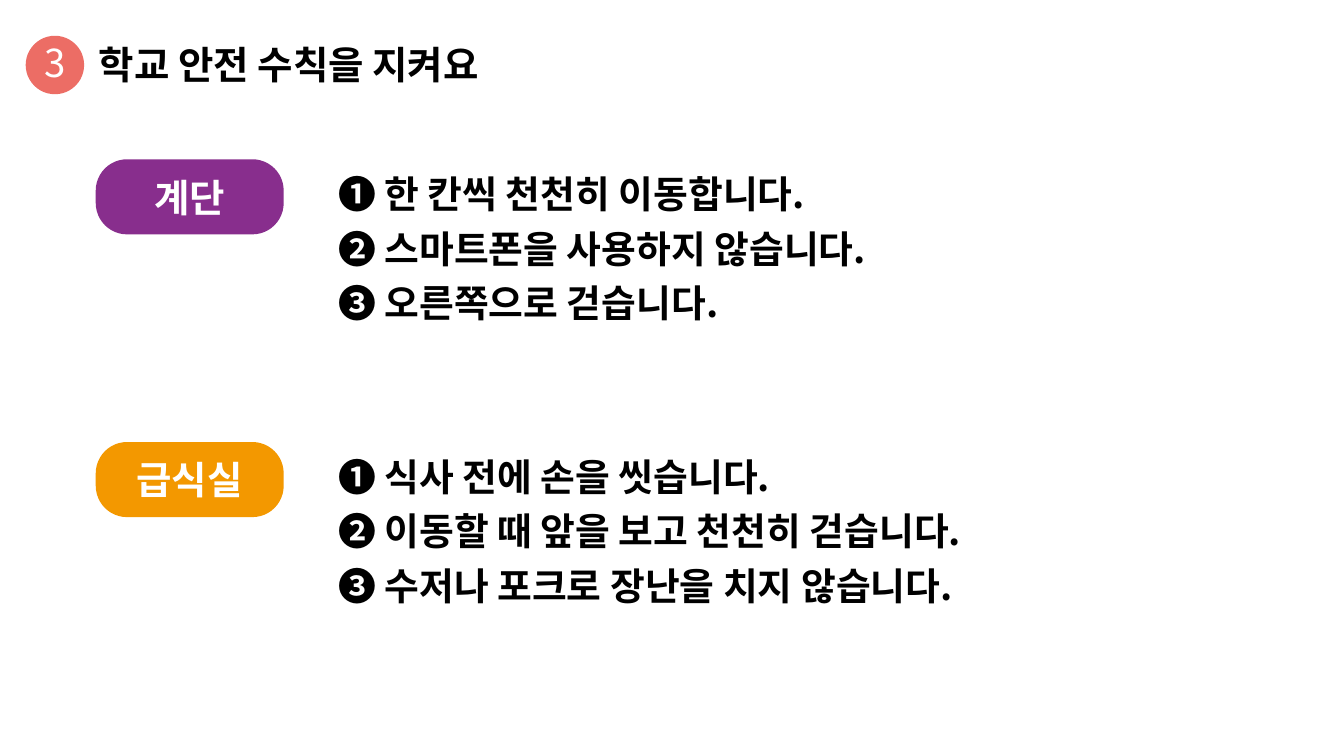
from lxml import etree
from pptx import Presentation
from pptx.dml.color import RGBColor
from pptx.enum.shapes import MSO_SHAPE
from pptx.enum.text import MSO_ANCHOR, MSO_AUTO_SIZE, PP_ALIGN
from pptx.oxml.ns import qn
from pptx.util import Inches, Pt

OVAL, PILL = MSO_SHAPE.OVAL, MSO_SHAPE.ROUNDED_RECTANGLE
LEFT, CENTER = PP_ALIGN.LEFT, PP_ALIGN.CENTER
TOP, MIDDLE = MSO_ANCHOR.TOP, MSO_ANCHOR.MIDDLE
NO_FIT = MSO_AUTO_SIZE.NONE

FONT = "Noto Sans CJK KR"
COLORS = {
    "text": "000000",
    "light": "FFFFFF",
    "number": "EC6D65",
    "stairs": "882E8D",
    "cafeteria": "F39800",
}
TITLE = "학교 안전 수칙을 지켜요"
SECTIONS = [
    ("계단", "stairs", 3.16, 13.33, [
        "➊ 한 칸씩 천천히 이동합니다.",
        "➋ 스마트폰을 사용하지 않습니다.",
        "➌ 오른쪽으로 걷습니다.",
    ]),
    ("급식실", "cafeteria", 8.77, 16.07, [
        "➊ 식사 전에 손을 씻습니다.",
        "➋ 이동할 때 앞을 보고 천천히 걷습니다.",
        "➌ 수저나 포크로 장난을 치지 않습니다.",
    ]),
]


def style_paragraph(para, size, color, bold=True, align=LEFT, spacing=1.0):
    """Format a paragraph with the Korean font and no bullet."""
    para.alignment = align
    para.line_spacing = spacing
    para.space_before = Pt(0)
    properties = para._p.get_or_add_pPr()
    properties.set("marL", "0")
    properties.set("indent", "0")
    etree.SubElement(properties, qn("a:buNone"))
    font = para.font
    font.name, font.size, font.bold = FONT, Pt(size), bold
    font.color.rgb = RGBColor.from_string(COLORS[color])
    etree.SubElement(font._element, qn("a:ea"), typeface=FONT)


def set_frame(box, inset_x, inset_y, anchor):
    """Set the margins, wrapping and anchor of a box."""
    frame = box.text_frame
    frame.word_wrap = True
    frame.auto_size = NO_FIT
    frame.vertical_anchor = anchor
    frame.margin_left = frame.margin_right = Inches(inset_x)
    frame.margin_top = frame.margin_bottom = Inches(inset_y)
    return frame


def place(box, left, top, width, height):
    """Move and size a placeholder."""
    box.left, box.top = Inches(left), Inches(top)
    box.width, box.height = Inches(width), Inches(height)


def fill_title(box):
    """Write the slide title."""
    place(box, 1.9, 0.75, 15.06, 0.75)
    frame = set_frame(box, 0.06, 0.06, TOP)
    frame.text = TITLE
    style_paragraph(frame.paragraphs[0], 55, "text")


def fill_rules(box, top, width, rules):
    """Write one list of safety rules."""
    place(box, 6.61, top, width, 3.37)
    frame = set_frame(box, 0.1, 0.05, TOP)
    frame.text = "\n".join(rules)
    for para in frame.paragraphs:
        style_paragraph(para, 54, "text", spacing=1.2)


def add_label(page, kind, left, top, width, height, text, color, bold=True, spacing=1.0):
    """Add a filled shape with a centred light label."""
    shape = page.shapes.add_shape(
        kind, Inches(left), Inches(top), Inches(width), Inches(height))
    shape.shadow.inherit = False
    shape.fill.solid()
    shape.fill.fore_color.rgb = RGBColor.from_string(COLORS[color])
    shape.line.fill.background()
    frame = set_frame(shape, 0, 0, MIDDLE)
    frame.text = text
    style_paragraph(frame.paragraphs[0], 55, "light", bold, CENTER, spacing)
    return shape


def main():
    """Build the school safety slide."""
    deck = Presentation()
    deck.slide_width, deck.slide_height = Inches(26.67), Inches(15)
    page = deck.slides.add_slide(deck.slide_layouts[3])
    title, *lists = page.placeholders
    fill_title(title)
    add_label(page, OVAL, 0.51, 0.71, 1.16, 1.16, "3", "number", False, 0.9)
    for box, (name, color, top, width, rules) in zip(lists, SECTIONS):
        pill = add_label(page, PILL, 1.9, top, 3.73, 1.49, name, color)
        pill.adjustments[0] = 0.417
        fill_rules(box, top, width, rules)
    deck.save("out.pptx")


if __name__ == "__main__":
    main()
